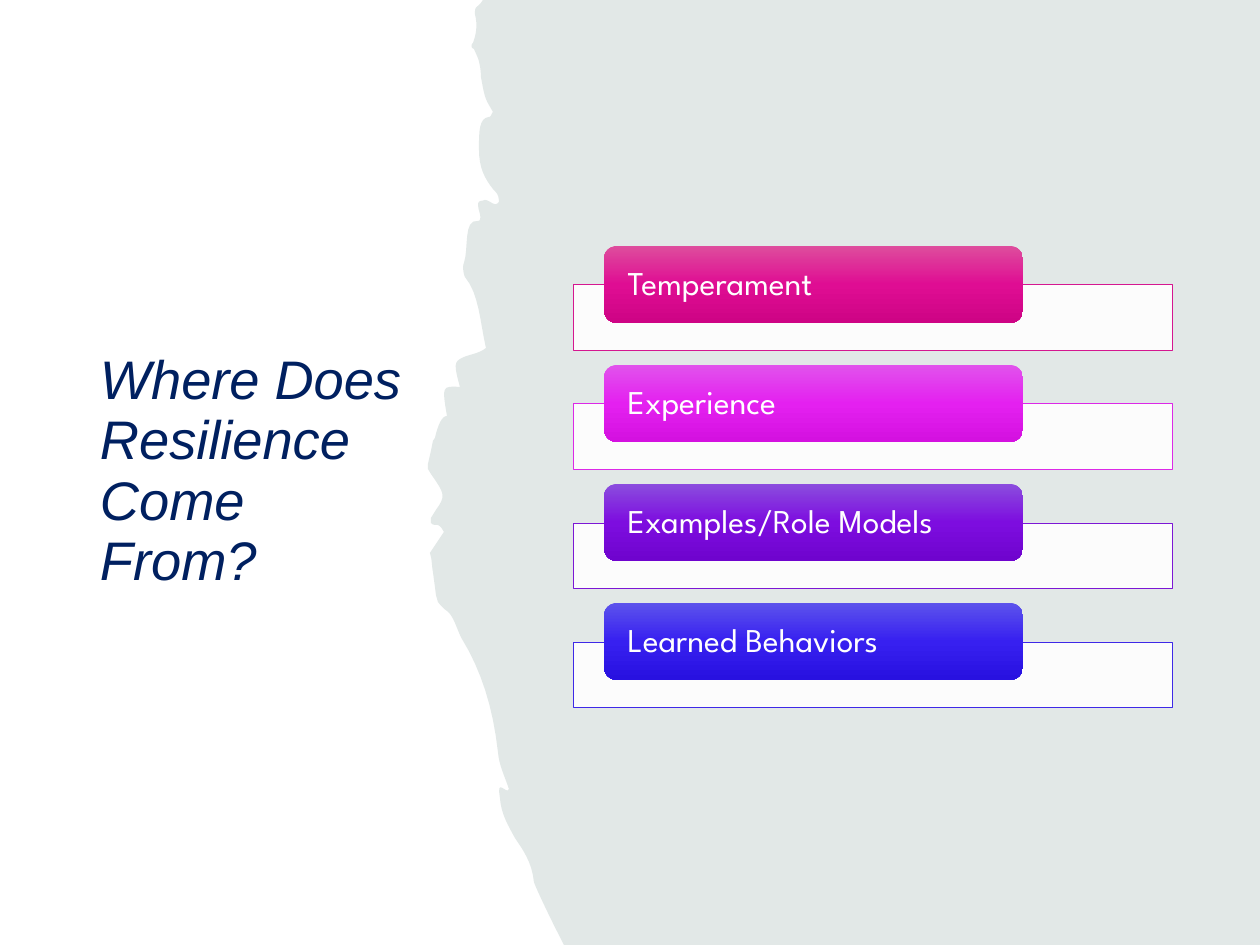
from lxml.etree import SubElement
from pptx import Presentation
from pptx.dml.color import RGBColor
from pptx.enum.shapes import MSO_SHAPE as SHAPE
from pptx.enum.text import MSO_ANCHOR as ANCHOR, PP_ALIGN as ALIGN
from pptx.oxml.ns import qn
from pptx.util import Pt

PX = 914400 // 126  # EMU per px
WIDTH, HEIGHT = 1260, 945

WHITE = RGBColor(0xFF, 0xFF, 0xFF)
MIST = RGBColor(0xE2, 0xE8, 0xE7)
NAVY = RGBColor(0x00, 0x20, 0x60)

# Source, frame line, and gradient from top to bottom
SOURCES = [
    ("Temperament", RGBColor(0xD5, 0x17, 0x90),
     (RGBColor(0xDE, 0x4D, 0x9D), RGBColor(0xDF, 0x0D, 0x93), RGBColor(0xCE, 0x04, 0x85))),
    ("Experience", RGBColor(0xDC, 0x29, 0xE7),
     (RGBColor(0xE1, 0x53, 0xEC), RGBColor(0xE4, 0x20, 0xF0), RGBColor(0xD4, 0x11, 0xE0))),
    ("Examples/Role Models", RGBColor(0x7C, 0x17, 0xD5),
     (RGBColor(0x8B, 0x4D, 0xDE), RGBColor(0x7D, 0x0D, 0xDF), RGBColor(0x6F, 0x04, 0xCE))),
    ("Learned Behaviors", RGBColor(0x3E, 0x29, 0xE7),
     (RGBColor(0x5D, 0x53, 0xEC), RGBColor(0x37, 0x20, 0xF0), RGBColor(0x28, 0x11, 0xE0))),
]
ROW_PITCH = 119

# Torn edge from bottom to top: a pair is a corner,
# six numbers are two Bezier controls and an end point
TORN_EDGE = [
    (564, 945), (562, 941), (544, 906, 534, 883, 534, 882),
    (532, 862, 523, 850, 515, 838), (509, 827, 501, 814, 500, 798),
    (496, 776, 507, 796, 509, 789), (505, 777, 499, 765, 498, 752),
    (493, 707, 481, 670, 462, 639), (457, 630, 454, 616, 447, 611),
    (444, 609, 441, 606, 438, 602), (436, 595), (435, 587), (433, 572),
    (432, 567, 432, 561, 431, 557), (430, 553), (444, 532),
    (438, 520, 435, 528, 431, 523), (431, 518), (436, 510),
    (446, 496, 445, 494, 431, 474), (428, 469), (428, 464), (431, 451),
    (433, 441), (435, 438), (438, 425, 442, 416, 447, 416),
    (442, 386, 442, 386, 460, 387), (454, 365, 454, 362, 462, 358),
    (470, 354, 479, 354, 486, 348), (480, 321, 479, 294, 465, 277),
    (464, 275, 462, 267, 464, 263), (469, 249, 463, 219, 478, 221),
    (480, 221, 481, 219, 480, 214), (475, 198, 481, 202, 485, 200),
    (490, 200, 495, 208, 499, 202), (499, 193, 495, 192, 493, 189),
    (485, 179, 479, 168, 479, 149), (479, 132, 479, 118, 489, 117),
    (491, 117, 491, 115, 493, 112), (489, 105),
    (484, 97, 483, 87, 481, 77), (481, 71, 480, 64, 478, 58),
    (474, 49), (471, 48, 471, 45, 473, 43), (476, 35, 478, 26, 475, 14),
    (475, 10, 475, 8, 478, 6), (481, 3), (483, 0),
]


def px(*lengths):
    return [length * PX for length in lengths]


def set_all(target, values):
    for name, value in values.items():
        setattr(target, name, value)


def trace(edge, steps=8):
    """Turn corners and Bezier segments into a list of EMU points."""
    points = []
    for segment in edge:
        if len(segment) == 2:
            points.append(tuple(px(*segment)))
            continue
        (x0, y0), (x1, y1, x2, y2, x3, y3) = points[-1], px(*segment)
        for step in range(1, steps + 1):
            t = step / steps
            u = 1 - t
            a, b, c, d = u ** 3, 3 * u * u * t, 3 * u * t * t, t ** 3
            points.append((round(a * x0 + b * x1 + c * x2 + d * x3),
                           round(a * y0 + b * y1 + c * y2 + d * y3)))
    return points


def add_torn_panel(slide):
    points = trace(TORN_EDGE) + [tuple(px(WIDTH, 0)), tuple(px(WIDTH, HEIGHT))]
    builder = slide.shapes.build_freeform(*points[0])
    builder.add_line_segments(points[1:], close=True)
    panel = builder.convert_to_shape()
    panel.shadow.inherit = False
    panel.fill.solid()
    panel.fill.fore_color.rgb = MIST
    panel.line.fill.background()


def write(shape, text, spacing, inset, font):
    frame = shape.text_frame
    set_all(frame, {"word_wrap": True, "vertical_anchor": ANCHOR.MIDDLE,
                    "margin_left": inset, "margin_right": inset,
                    "margin_top": 0, "margin_bottom": 0})
    paragraph = frame.paragraphs[0]
    set_all(paragraph, {"alignment": ALIGN.LEFT, "line_spacing": spacing})
    run = paragraph.add_run()
    run.text = text
    color = font.pop("color")
    set_all(run.font, font)
    run.font.color.rgb = color


def add_frame(slide, top, line_color):
    frame = slide.shapes.add_shape(SHAPE.RECTANGLE, *px(573, top, 600, 66))
    frame.shadow.inherit = False
    frame.fill.solid()
    frame.fill.fore_color.rgb = WHITE
    color = frame.fill._xPr.find(qn("a:solidFill"))[0]
    SubElement(color, qn("a:alpha"), val="90000")
    frame.line.color.rgb = line_color
    frame.line.width = Pt(0.5)


def add_card(slide, top, text, colors):
    card = slide.shapes.add_shape(SHAPE.ROUNDED_RECTANGLE, *px(604, top, 419, 77))
    card.shadow.inherit = False
    card.line.fill.background()
    card.fill.gradient()
    card.fill.gradient_angle = 270
    # Three even stops in place of the default ones
    stops = card.fill._xPr.find(qn("a:gradFill")).find(qn("a:gsLst"))
    for stop in list(stops):
        stops.remove(stop)
    for index, color in enumerate(colors):
        stop = SubElement(stops, qn("a:gs"), pos=str(index * 50000))
        SubElement(stop, qn("a:srgbClr"), val=str(color))
    write(card, text, 0.9, 20 * PX,
          {"name": "League Spartan", "size": Pt(19), "color": WHITE})


def main():
    deck = Presentation()
    deck.slide_width, deck.slide_height = px(WIDTH, HEIGHT)
    slide = deck.slides.add_slide(deck.slide_layouts[6])

    # Background
    slide.background.fill.solid()
    slide.background.fill.fore_color.rgb = WHITE
    add_torn_panel(slide)

    # Title
    title = slide.shapes.add_textbox(*px(87, 98, 330, 748))
    write(title, "Where Does Resilience Come From?", 0.93, 13 * PX,
          {"name": "Arial", "size": Pt(31), "italic": True, "color": NAVY})

    # Sources of resilience
    for row, (text, line_color, colors) in enumerate(SOURCES):
        offset = row * ROW_PITCH
        add_frame(slide, 285 + offset, line_color)
        add_card(slide, 246 + offset, text, colors)

    deck.save("out.pptx")


if __name__ == "__main__":
    main()
